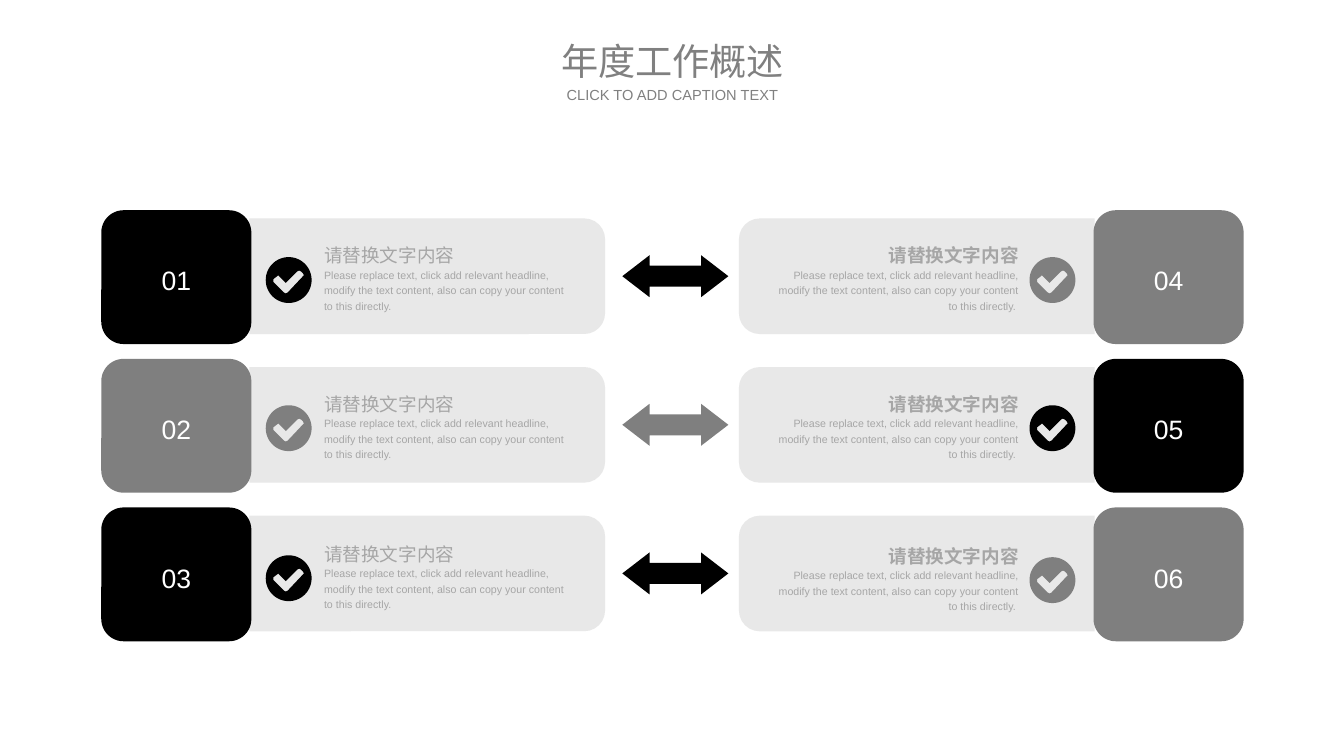
"""Build the annual work overview slide: six numbered cards in two facing columns."""
from math import cos, pi, sin

from lxml import etree
from pptx import Presentation
from pptx.dml.color import RGBColor
from pptx.enum.shapes import MSO_SHAPE
from pptx.enum.text import MSO_ANCHOR, MSO_AUTO_SIZE, PP_ALIGN
from pptx.oxml.ns import qn
from pptx.util import Inches, Pt

ROUNDED = MSO_SHAPE.ROUNDED_RECTANGLE
ROUNDED_END = MSO_SHAPE.ROUND_2_SAME_RECTANGLE
DOUBLE_ARROW = MSO_SHAPE.LEFT_RIGHT_ARROW
MIDDLE, TOP = MSO_ANCHOR.MIDDLE, MSO_ANCHOR.TOP
LEFT, CENTER, RIGHT = PP_ALIGN.LEFT, PP_ALIGN.CENTER, PP_ALIGN.RIGHT
NO_AUTOFIT = MSO_AUTO_SIZE.NONE

COLORS = {
    "black": "000000",
    "gray": "7F7F7F",
    "panel": "E6E6E6",
    "heading": "808080",
    "body": "A6A6A6",
    "white": "FFFFFF",
}
FONT = "Arial"
HEADING = "请替换文字内容"
BODY = ("Please replace text, click add relevant headline, modify the text content, "
        "also can copy your content to this directly.")

ROW_TOP, ROW_STEP = 2.2, 1.555
CARD_WIDTH, CARD_HEIGHT = 1.57, 1.4
PANEL_WIDTH, PANEL_HEIGHT = 3.72, 1.21
RADIUS = 0.24
TICK = [(0.39, 0.17), (0.37, 0.15), (0.35, 0.14), (0.33, 0.15), (0.21, 0.27),
        (0.14, 0.2), (0.13, 0.19), (0.12, 0.2), (0.08, 0.23), (0.08, 0.26),
        (0.19, 0.37), (0.21, 0.38), (0.23, 0.37), (0.39, 0.2), (0.4, 0.19)]
CIRCLE = [(RADIUS + RADIUS * cos(2 * pi * step / 72), RADIUS + RADIUS * sin(2 * pi * step / 72))
          for step in range(72)]

SIDES = [
    {"card": 1.06, "panel": 2.61, "turn": 90, "icon": 2.78, "text": 3.39, "align": LEFT,
     "bold": False, "body": BODY, "text_tops": (2.51, 4.06, 5.63),
     "colors": ("black", "gray", "black")},
    {"card": 11.44, "panel": 7.73, "turn": 270, "icon": 10.77, "text": 8.08, "align": RIGHT,
     "bold": True, "body": BODY + " ", "text_tops": (2.51, 4.06, 5.65),
     "colors": ("gray", "black", "gray")},
]


def paint(shape, color):
    shape.fill.solid()
    shape.fill.fore_color.rgb = RGBColor.from_string(COLORS[color])
    shape.line.fill.background()
    shape.shadow.inherit = False


def style_text(shape, anchor, align, size, color):
    frame = shape.text_frame
    frame.word_wrap = True
    frame.auto_size = NO_AUTOFIT
    frame.vertical_anchor = anchor
    frame.margin_left = frame.margin_right = frame.margin_top = frame.margin_bottom = 0
    paragraph = frame.paragraphs[0]
    paragraph.alignment = align
    paragraph.space_before = Pt(0)
    paragraph.font.name = FONT
    paragraph.font.size = Pt(size)
    paragraph.font.color.rgb = RGBColor.from_string(COLORS[color])
    return paragraph


presentation = Presentation()
presentation.slide_width = Inches(14.06)
presentation.slide_height = Inches(7.91)
slide = presentation.slides.add_slide(presentation.slide_layouts[0])
shapes = slide.shapes

title, caption = slide.placeholders
for placeholder, text, top, height, size in [
    (title, "年度工作概述", 0.39, 0.49, 28),
    (caption, "CLICK TO ADD CAPTION TEXT", 0.9, 0.19, 11),
]:
    placeholder.left, placeholder.top = Inches(5.77), Inches(top)
    placeholder.width, placeholder.height = Inches(2.53), Inches(height)
    placeholder.text_frame.text = text
    style_text(placeholder, MIDDLE, CENTER, size, "heading")

for row, color in enumerate(SIDES[0]["colors"]):
    arrow = shapes.add_shape(DOUBLE_ARROW, Inches(6.51), Inches(ROW_TOP + 0.47 + row * ROW_STEP),
                             Inches(1.11), Inches(0.44))
    arrow.adjustments[0], arrow.adjustments[1] = 0.5, 0.65
    paint(arrow, color)

for column, side in enumerate(SIDES):
    for row, color in enumerate(side["colors"]):
        card_top = ROW_TOP + row * ROW_STEP
        text_top = side["text_tops"][row]

        inset = (PANEL_WIDTH - PANEL_HEIGHT) / 2
        panel = shapes.add_shape(ROUNDED_END, Inches(side["panel"] + inset),
                                 Inches(card_top + 0.085 - inset),
                                 Inches(PANEL_HEIGHT), Inches(PANEL_WIDTH))
        panel.rotation = side["turn"]
        panel.adjustments[0] = 0.18
        paint(panel, "panel")
        panel_color = panel.fill._xPr.find(qn("a:solidFill"))[0]
        etree.SubElement(panel_color, qn("a:alpha"), val="90000")

        contours = [[(Inches(side["icon"] + x), Inches(text_top + 0.18 + y)) for x, y in outline]
                    for outline in (CIRCLE, TICK)]
        builder = shapes.build_freeform(*contours[0][0])
        builder.add_line_segments(contours[0][1:], close=True)
        builder.move_to(*contours[1][0])
        builder.add_line_segments(contours[1][1:], close=True)
        paint(builder.convert_to_shape(), color)

        text_box = shapes.add_textbox(Inches(side["text"]), Inches(text_top),
                                      Inches(2.58), Inches(0.77))
        paragraph = style_text(text_box, TOP, side["align"], 14, "body")
        paragraph.line_spacing = 1.2
        heading = paragraph.add_run()
        heading.text = HEADING
        heading.font.bold = side["bold"]
        paragraph.add_line_break()
        body = paragraph.add_run()
        body.text = side["body"]
        body.font.size = Pt(8)

        card = shapes.add_shape(ROUNDED, Inches(side["card"]), Inches(card_top),
                                Inches(CARD_WIDTH), Inches(CARD_HEIGHT))
        paint(card, color)
        card.text_frame.text = f"{column * 3 + row + 1:02}"
        style_text(card, MIDDLE, CENTER, 20, "white").line_spacing = 1.2

presentation.save("out.pptx")
